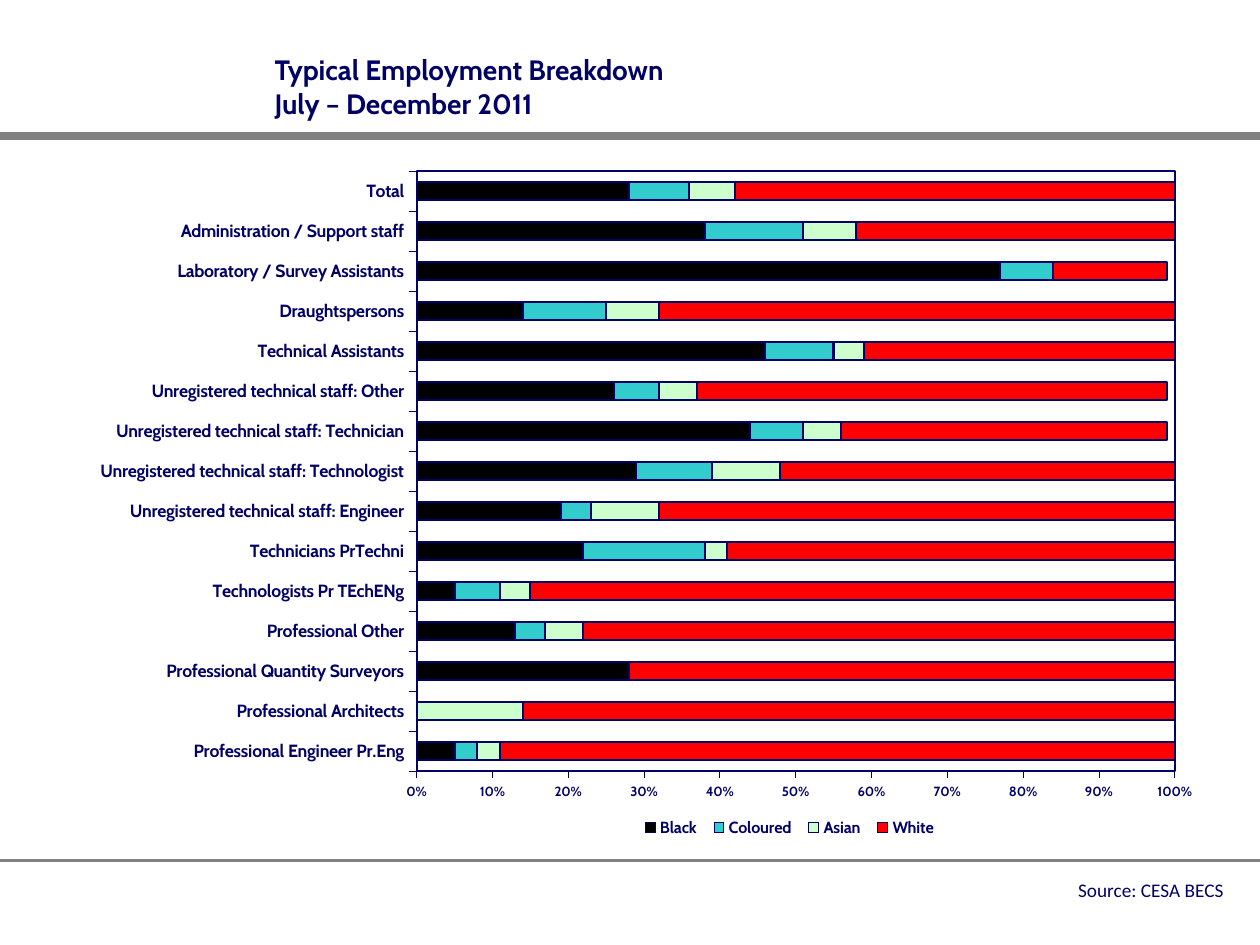
from lxml import etree
from pptx import Presentation
from pptx.chart.data import CategoryChartData
from pptx.dml.color import RGBColor
from pptx.enum import chart as charts, shapes, text
from pptx.oxml import parse_xml
from pptx.oxml.ns import nsdecls, qn
from pptx.util import Cm, Pt

NAVY = RGBColor(0x00, 0x00, 0x66)
GREY = RGBColor(0x80, 0x80, 0x80)
BLACK = RGBColor(0x00, 0x00, 0x00)
TEAL = RGBColor(0x33, 0xCC, 0xCC)
MINT = RGBColor(0xCC, 0xFF, 0xCC)
RED = RGBColor(0xFF, 0x00, 0x00)

GROUPS = [("Black", BLACK), ("Coloured", TEAL), ("Asian", MINT), ("White", RED)]
STAFF = [
    ("Professional Engineer Pr.Eng", 0.05, 0.03, 0.03, 0.89),
    ("Professional Architects", 0, 0, 0.14, 0.86),
    ("Professional Quantity Surveyors", 0.28, 0, 0, 0.72),
    ("Professional Other", 0.13, 0.04, 0.05, 0.78),
    ("Technologists Pr TEchENg", 0.05, 0.06, 0.04, 0.85),
    ("Technicians PrTechni", 0.22, 0.16, 0.03, 0.59),
    ("Unregistered technical staff: Engineer", 0.19, 0.04, 0.09, 0.68),
    ("Unregistered technical staff: Technologist", 0.29, 0.1, 0.09, 0.52),
    ("Unregistered technical staff: Technician", 0.44, 0.07, 0.05, 0.43),
    ("Unregistered technical staff: Other", 0.26, 0.06, 0.05, 0.62),
    ("Technical Assistants", 0.46, 0.09, 0.04, 0.41),
    ("Draughtspersons", 0.14, 0.11, 0.07, 0.68),
    ("Laboratory / Survey Assistants", 0.77, 0.07, 0, 0.15),
    ("Administration / Support staff", 0.38, 0.13, 0.07, 0.42),
    ("Total", 0.28, 0.08, 0.06, 0.58),
]


def style_font(font, size, name="Cabin", bold=True):
    font.size = Pt(size)
    font.name = name
    font.bold = bold
    font.color.rgb = NAVY


def style_line(line, color, width):
    line.color.rgb = color
    line.width = Pt(width)


def add_rule(slide, top, width):
    rule = slide.shapes.add_connector(
        shapes.MSO_CONNECTOR.STRAIGHT, 0, Cm(top), Cm(25.4), Cm(top))
    style_line(rule.line, GREY, width)
    etree.SubElement(rule._element.spPr, qn("a:effectLst"))


def fill_title(slide, lines):
    title = slide.shapes.title
    title.left, title.top = Cm(5.28), Cm(0.64)
    title.width, title.height = Cm(19.25), Cm(1.9)
    frame = title.text_frame
    frame.word_wrap = True
    frame.auto_size = text.MSO_AUTO_SIZE.NONE
    frame.vertical_anchor = text.MSO_ANCHOR.BOTTOM
    paragraph = frame.paragraphs[0]
    paragraph.alignment = text.PP_ALIGN.LEFT
    for index, line in enumerate(lines):
        if index:
            paragraph.add_line_break()
        run = paragraph.add_run()
        run.text = line
        style_font(run.font, 16)


def add_source(slide, wording):
    box = slide.shapes.add_textbox(Cm(21.44), Cm(17.58), Cm(3.48), Cm(0.74))
    frame = box.text_frame
    frame.word_wrap = False
    frame.auto_size = text.MSO_AUTO_SIZE.SHAPE_TO_FIT_TEXT
    paragraph = frame.paragraphs[0]
    paragraph.alignment = text.PP_ALIGN.RIGHT
    run = paragraph.add_run()
    run.text = wording
    style_font(run.font, 11, "Calibri", False)


def place_part(element, index, x, y, width, height, inner=False):
    for old in element.findall(qn("c:layout")):
        element.remove(old)
    target = '<c:layoutTarget val="inner"/>' if inner else ""
    sizes = "".join(f'<c:{tag} val="{value}"/>' for tag, value in
                    zip("xywh", (x, y, width, height)))
    element.insert(index, parse_xml(
        f'<c:layout {nsdecls("c")}><c:manualLayout>{target}'
        f'<c:xMode val="edge"/><c:yMode val="edge"/>{sizes}'
        '</c:manualLayout></c:layout>'))


def outline_plot(plot_area):
    plot_area.append(parse_xml(
        f'<c:spPr {nsdecls("c", "a")}><a:noFill/><a:ln w="15240"><a:solidFill>'
        f'<a:srgbClr val="{NAVY}"/></a:solidFill></a:ln></c:spPr>'))


def style_axis(axis, size):
    axis.has_major_gridlines = False
    axis.major_tick_mark = charts.XL_TICK_MARK.OUTSIDE
    axis.minor_tick_mark = charts.XL_TICK_MARK.NONE
    style_font(axis.tick_labels.font, size)
    style_line(axis.format.line, NAVY, 0.3)


def add_breakdown_chart(slide):
    data = CategoryChartData(number_format="0%")
    data.categories = [row[0] for row in STAFF]
    for column, (name, _) in enumerate(GROUPS, 1):
        data.add_series(name, [row[column] for row in STAFF])
    chart = slide.shapes.add_chart(
        charts.XL_CHART_TYPE.BAR_STACKED,
        Cm(0.15), Cm(3.1), Cm(24.26), Cm(14), data).chart
    style_font(chart.font, 23.2)
    chart.has_title = False

    plot = chart.plots[0]
    plot.vary_by_categories = False
    plot.gap_width = 120
    plot.overlap = 100
    for series, (_, color) in zip(plot.series, GROUPS):
        series.format.fill.solid()
        series.format.fill.fore_color.rgb = color
        style_line(series.format.line, NAVY, 1.22)

    style_axis(chart.category_axis, 10.1)
    style_axis(chart.value_axis, 7.6)
    chart.value_axis.minimum_scale = 0
    chart.value_axis.maximum_scale = 1
    chart.value_axis.major_unit = 0.1
    chart.value_axis.tick_labels.number_format = "0%"
    chart.value_axis.tick_labels.number_format_is_linked = False

    chart.has_legend = True
    legend = chart.legend
    legend.position = charts.XL_LEGEND_POSITION.BOTTOM
    legend.include_in_layout = False
    style_font(legend.font, 9.2)
    place_part(legend._element, 1, 0.52, 0.96, 0.26, 0.03)

    plot_area = chart._chartSpace.chart.plotArea
    place_part(plot_area, 0, 0.34, 0.025, 0.63, 0.864, inner=True)
    outline_plot(plot_area)


def main():
    presentation = Presentation()
    presentation.slide_width = Cm(25.4)
    presentation.slide_height = Cm(19.05)
    slide = presentation.slides.add_slide(presentation.slide_layouts[5])
    add_rule(slide, 2.74, 5)
    add_rule(slide, 17.35, 2)
    fill_title(slide, ["Typical Employment Breakdown", "July – December 2011"])
    add_breakdown_chart(slide)
    add_source(slide, "Source: CESA BECS")
    presentation.save("out.pptx")


if __name__ == "__main__":
    main()
